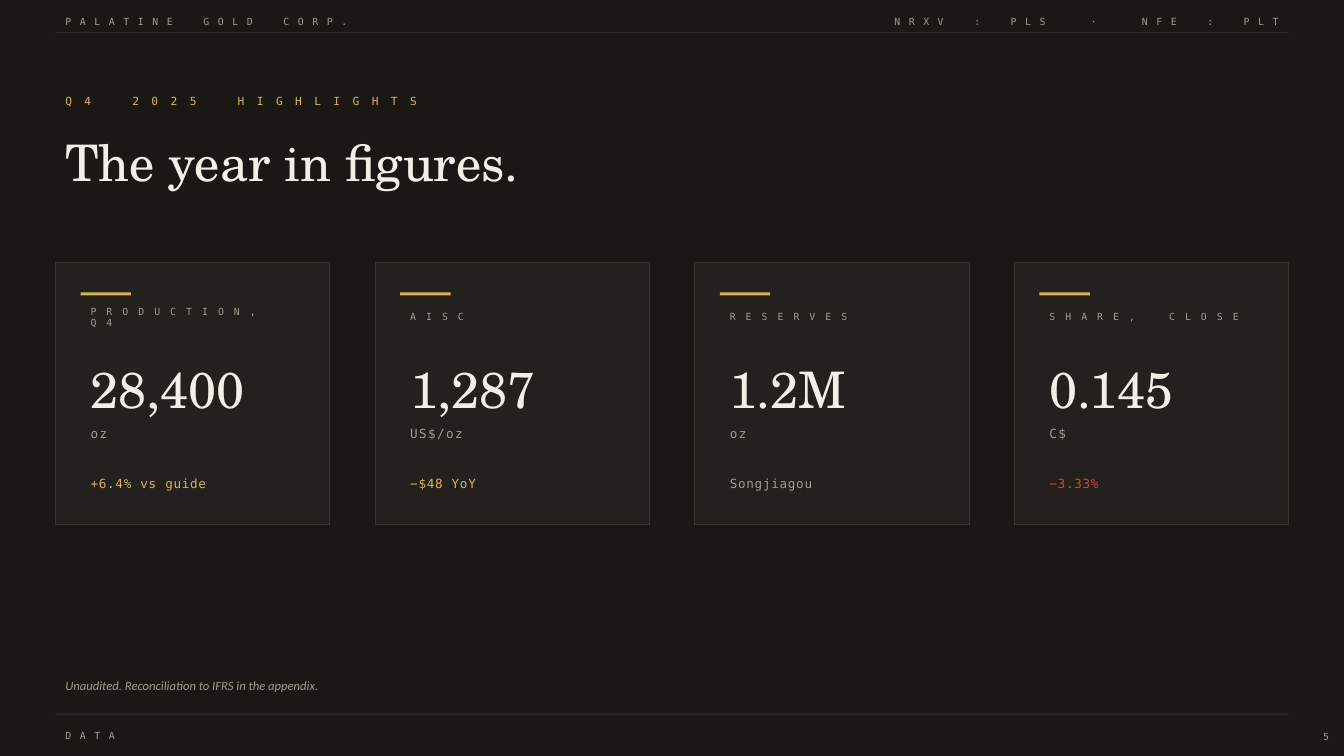
from pptx import Presentation
from pptx.dml.color import RGBColor
from pptx.enum.shapes import MSO_SHAPE
from pptx.enum.text import MSO_ANCHOR, PP_ALIGN
from pptx.util import Inches, Pt

INK = RGBColor(0x1A, 0x17, 0x14)
PANEL = RGBColor(0x23, 0x20, 0x1D)
RULE = RGBColor(0x3A, 0x33, 0x2D)
GOLD = RGBColor(0xD9, 0xB2, 0x5A)
IVORY = RGBColor(0xF4, 0xEF, 0xE6)
STONE = RGBColor(0xA3, 0x9C, 0x8F)
RED = RGBColor(0xD0, 0x4A, 0x2A)

MONO = "DejaVu Sans Mono"
MONO_ADVANCE = 0.602  # glyph width as a share of the font size
MARGIN = 0.55
CONTENT_WIDTH = 12.23


class Deck:
    """Holds the text styles and the slide being built."""

    STYLES = {
        "label": {"name": MONO, "size": Pt(7)},
        "kicker": {"name": MONO, "size": Pt(8)},
        "detail": {"name": MONO, "size": Pt(9)},
        "display": {"name": "TeX Gyre Schola", "size": Pt(36)},
        "note": {"name": "Calibri", "size": Pt(9), "italic": True},
    }

    def __init__(self):
        self.presentation = Presentation()
        self.presentation.slide_width = Inches(13.33)
        self.presentation.slide_height = Inches(7.5)
        layout = self.presentation.slide_layouts[6]
        self.slide = self.presentation.slides.add_slide(layout)
        self.slide.background.fill.solid()
        self.slide.background.fill.fore_color.rgb = INK

    def block(self, left, top, width, height, fill, outline=None):
        shape = self.slide.shapes.add_shape(
            MSO_SHAPE.RECTANGLE, *map(Inches, (left, top, width, height)))
        shape.shadow.inherit = False
        shape.fill.solid()
        shape.fill.fore_color.rgb = fill
        if outline is None:
            shape.line.fill.background()
        else:
            shape.line.color.rgb = outline
            shape.line.width = Pt(0.5)

    def paragraph(self, left, top, width, height, align, anchor):
        box = self.slide.shapes.add_textbox(
            *map(Inches, (left, top, width, height)))
        frame = box.text_frame
        frame.word_wrap = True
        frame.vertical_anchor = anchor
        frame.paragraphs[0].alignment = align
        return frame.paragraphs[0]

    def run(self, paragraph, text, style, color, spacing):
        run = paragraph.add_run()
        run.text = text
        for attribute, value in self.STYLES[style].items():
            setattr(run.font, attribute, value)
        run.font.color.rgb = color
        if spacing:
            run.font._element.set("spc", str(round(spacing * 100)))

    def text(self, left, top, width, height, text, style, color, spacing=0,
             align=PP_ALIGN.LEFT, anchor=MSO_ANCHOR.MIDDLE):
        paragraph = self.paragraph(left, top, width, height, align, anchor)
        self.run(paragraph, text, style, color, spacing)

    def tracked(self, left, top, width, height, text, style, color, spacing,
                align=PP_ALIGN.LEFT):
        """Spaced-out letters; one widened space separates the words."""
        paragraph = self.paragraph(left, top, width, height, align,
                                   MSO_ANCHOR.MIDDLE)
        advance = self.STYLES[style]["size"].pt * MONO_ADVANCE
        words = text.split()
        for index, word in enumerate(words):
            if index:
                cells = 6 if "·" in (word, words[index - 1]) else 4
                gap = (cells - 1) * advance + cells * spacing
                self.run(paragraph, " ", style, color, gap)
            self.run(paragraph, " ".join(word), style, color, spacing)

    def card(self, left, label, figure, unit, remark, remark_color):
        inner, width = left + 0.25, 2.22
        self.block(left, 2.6, 2.72, 2.6, PANEL, RULE)
        self.block(inner, 2.9, 0.5, 0.03, GOLD)
        self.tracked(inner, 3.02, width, 0.25, label, "label", STONE, 1.5)
        self.text(inner, 3.45, width, 0.8, figure, "display", IVORY)
        self.text(inner, 4.15, width, 0.3, unit, "detail", STONE, 1)
        self.text(inner, 4.65, width, 0.3, remark, "detail", remark_color, 0.5)


def main():
    deck = Deck()

    # Header and footer
    for rule_top in (0.32, 7.08):
        deck.block(MARGIN, rule_top, CONTENT_WIDTH, 0.01, RULE)
    deck.tracked(MARGIN, 0.1, 6, 0.22, "PALATINE GOLD CORP.", "label", STONE, 1)
    deck.tracked(6.78, 0.1, 6, 0.22, "NRXV : PLS · NFE : PLT", "label", STONE,
                 1, PP_ALIGN.RIGHT)
    deck.tracked(MARGIN, 7.2, 6, 0.2, "DATA", "label", STONE, 1)

    # Title
    deck.tracked(MARGIN, 0.85, 5, 0.3, "Q4 2025 HIGHLIGHTS", "kicker", GOLD, 2)
    deck.text(MARGIN, 1.15, 8, 0.9, "The year in figures.", "display", IVORY)

    # Key figures
    highlights = [
        ("PRODUCTION, Q4", "28,400", "oz", "+6.4% vs guide", GOLD),
        ("AISC", "1,287", "US$/oz", "−$48 YoY", GOLD),
        ("RESERVES", "1.2M", "oz", "Songjiagou", STONE),
        ("SHARE, CLOSE", "0.145", "C$", "−3.33%", RED),
    ]
    for column, highlight in enumerate(highlights):
        deck.card(MARGIN + column * 3.17, *highlight)

    # Footnote and page number
    deck.text(MARGIN, 6.65, 8, 0.3,
              "Unaudited. Reconciliation to IFRS in the appendix.",
              "note", STONE)
    deck.text(12.78, 7.2, 0.5, 0.2, "5", "label", STONE,
              align=PP_ALIGN.RIGHT, anchor=MSO_ANCHOR.TOP)

    deck.presentation.save("out.pptx")


if __name__ == "__main__":
    main()
